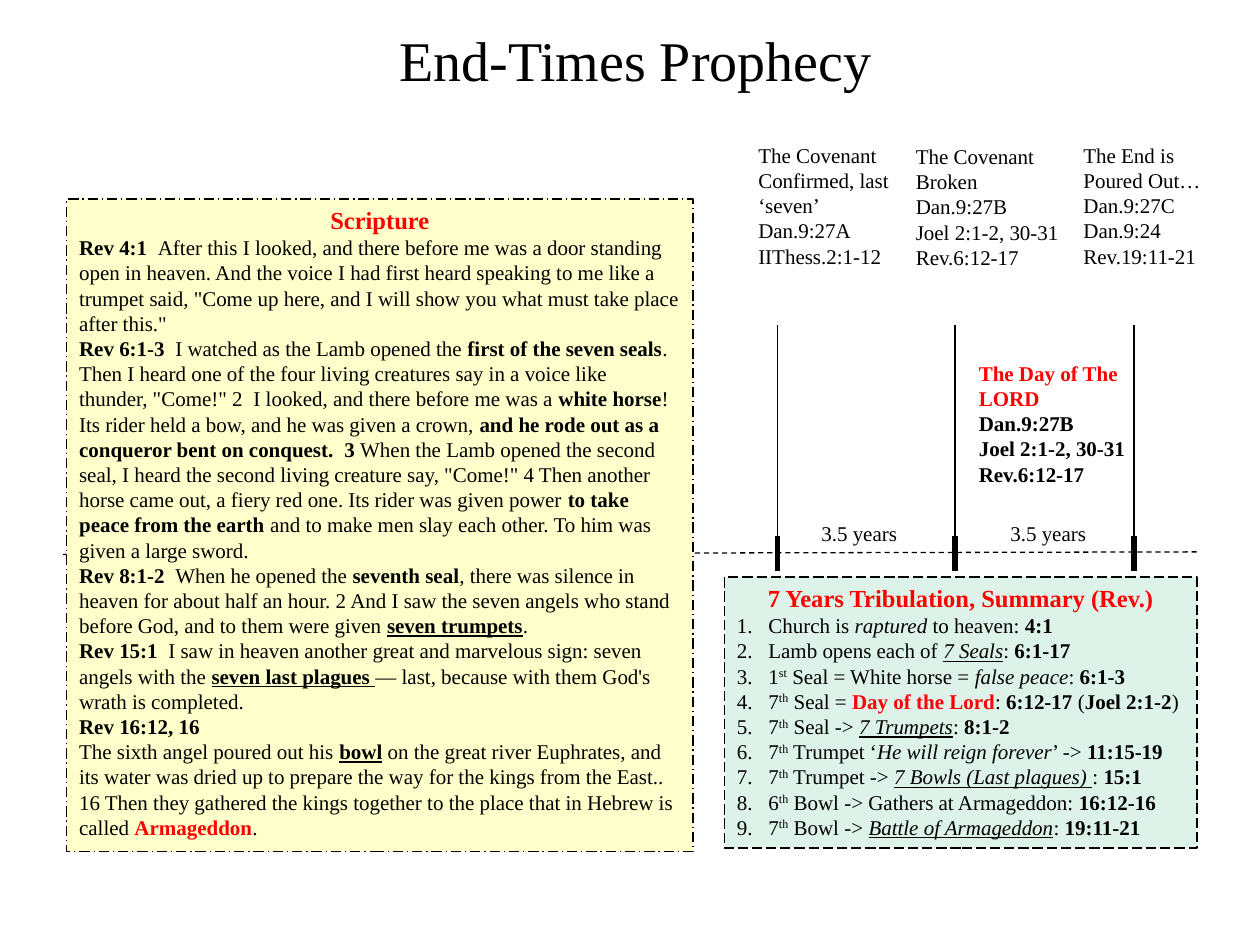
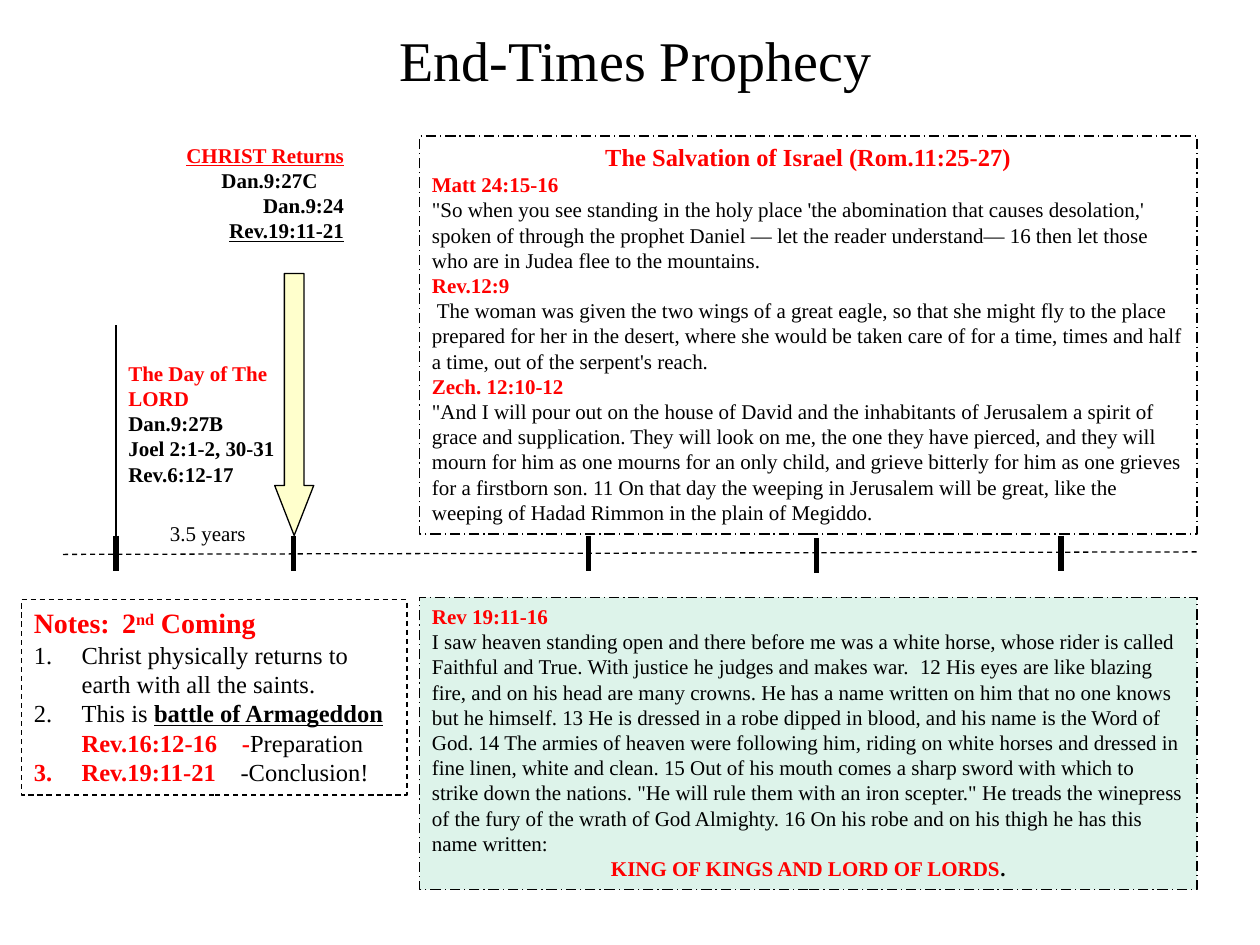
from lxml import etree
from pptx import Presentation
from pptx.dml.color import RGBColor
from pptx.enum import dml, shapes, text
from pptx.oxml.ns import qn
from pptx.util import Inches, Pt

HUES = {
    "ink": "000000",
    "red": "FF0000",
    "cream": "FFFFCC",
    "mint": "DDF3EA",
}
FONT = "Times New Roman"
DASH = dml.MSO_LINE
SIDES = {"^": text.PP_ALIGN.CENTER, ">": text.PP_ALIGN.RIGHT}
GAPS = {"g": "300", "w": "1050"}
AXIS = 4.25
SPAN = "3.5 years"
DAY = ["{br|The Day of The LORD}", "{b|Dan.9:27B}", "{b|Joel 2:1-2, 30-31}", "{b|Rev.6:12-17}"]

SCRIPT = [
    "^{br|Scripture}",
    "{b|Rev 4:1}{g| }After this I looked, and there before me was a door standing open in heaven. "
    "And the voice I had first heard speaking to me like a trumpet said, \"Come up here, "
    "and I will show you what must take place after this.\"",
    "{b|Rev 6:1-3}{g| }I watched as the Lamb opened the {b|first of the seven seals}. "
    "Then I heard one of the four living creatures say in a voice like thunder, \"Come!\" 2{g| }"
    "I looked, and there before me was a {b|white horse}! Its rider held a bow, and he was given "
    "a crown, {b|and he rode out as a conqueror bent on conquest.}{g| }{b|3 }When the Lamb opened "
    "the second seal, I heard the second living creature say, \"Come!\" 4 Then another horse came "
    "out, a fiery red one. Its rider was given power {b|to take peace from the earth }and to make "
    "men slay each other. To him was given a large sword.",
    "{b|Rev 8:1-2}{g| }When he opened the {b|seventh seal}, there was silence in heaven for about "
    "half an hour. 2 And I saw the seven angels who stand before God, and to them were given "
    "{bu|seven trumpets}.",
    "{b|Rev 15:1}{g| }I saw in heaven another great and marvelous sign: seven angels with the "
    "{bu|seven last plagues }— last, because with them God's wrath is completed.",
    "{b|Rev 16:12, 16}",
    "The sixth angel poured out his {bu|bowl} on the great river Euphrates, and its water was "
    "dried up to prepare the way for the kings from the East..",
    "16 Then they gathered the kings together to the place that in Hebrew is called "
    "{br|Armageddon}.",
]
SEVEN = [
    "^{br|7 Years Tribulation, Summary (Rev.)}",
    "#Church is {i|raptured} to heaven: {b|4:1}",
    "#Lamb opens each of {iu|7 Seals}: {b|6:1-17}",
    "#1{s|st} Seal = White horse = {i|false peace}: {b|6:1-3}",
    "#7{s|th} Seal = {br|Day of the Lord}: {b|6:12-17} ({b|Joel 2:1-2})",
    "#7{s|th} Seal -> {iu|7 Trumpets}: {b|8:1-2}",
    "#7{s|th} Trumpet ‘{i|He will reign forever}’ -> {b|11:15-19}",
    "#7{s|th} Trumpet -> {iu|7 Bowls (Last plagues) }: {b|15:1}",
    "#6{s|th} Bowl -> Gathers at Armageddon: {b|16:12-16}",
    "#7{s|th} Bowl -> {iu|Battle of Armageddon}: {b|19:11-21}",
]
NOTES = [
    "{br|Notes:}{brg| }{br|2}{brs|nd}{br| Coming}",
    "#Christ physically returns to earth with all the saints.",
    "#This is {bu|battle of Armageddon }{br|Rev.16:12-16}{brw| }{br|-}Preparation",
    "#{br|Rev.19:11-21}{w| }-Conclusion!",
]
RIDER = [
    "{br|Rev 19:11-16}",
    "I saw heaven standing open and there before me was a white horse, whose rider is called "
    "Faithful and True. With justice he judges and makes war.{g| }12 His eyes are like blazing "
    "fire, and on his head are many crowns. He has a name written on him that no one knows but he "
    "himself. 13 He is dressed in a robe dipped in blood, and his name is the Word of God. 14 The "
    "armies of heaven were following him, riding on white horses and dressed in fine linen, white "
    "and clean. 15 Out of his mouth comes a sharp sword with which to strike down the nations. "
    "\"He will rule them with an iron scepter.\" He treads the winepress of the fury of the wrath "
    "of God Almighty. 16 On his robe and on his thigh he has this name written:",
    "^{br|KING OF KINGS AND LORD OF LORDS}{b|.}",
]
SAVED = [
    "^{br|The Salvation of Israel (Rom.11:25-27)}",
    "{br|Matt 24:15-16}",
    "\"So when you see standing in the holy place 'the abomination that causes desolation,' spoken "
    "of through the prophet Daniel — let the reader understand— 16 then let those who are in Judea "
    "flee to the mountains.",
    "{br|Rev.12:9}",
    " The woman was given the two wings of a great eagle, so that she might fly to the place "
    "prepared for her in the desert, where she would be taken care of for a time, times and half "
    "a time, out of the serpent's reach.",
    "{br|Zech. 12:10-12}",
    "\"And I will pour out on the house of David and the inhabitants of Jerusalem a spirit of "
    "grace and supplication. They will look on me, the one they have pierced, and they will mourn "
    "for him as one mourns for an only child, and grieve bitterly for him as one grieves for a "
    "firstborn son. 11 On that day the weeping in Jerusalem will be great, like the weeping of "
    "Hadad Rimmon in the plain of Megiddo.",
]


def hue(name):
    return RGBColor.from_string(HUES[name])


def add_run(para, words, size, style=""):
    run = para.add_run()
    run.text = words
    font = run.font
    font.name, font.size = FONT, Pt(size)
    font.bold, font.italic, font.underline = "b" in style, "i" in style, "u" in style
    font.color.rgb = hue("red" if "r" in style else "ink")
    props = run._r.get_or_add_rPr()
    if "s" in style:
        props.set("baseline", "30000")
    for key in GAPS:
        if key in style:
            props.set("spc", GAPS[key])


def indent(para, left, first=0):
    props = para._p.get_or_add_pPr()
    props.set("marL", str(Inches(left)))
    props.set("indent", str(Inches(first)))
    return props


def add_para(para, line, size, hang):
    para.alignment = SIDES.get(line[0], text.PP_ALIGN.LEFT)
    if line[0] == "#":
        props = indent(para, hang, -hang)
        etree.SubElement(props, qn("a:buAutoNum"), type="arabicPeriod")
    elif line[0] == "+":
        indent(para, 0.33)
    for chunk in line.lstrip("^>#+").split("{"):
        marked, brace, plain = chunk.rpartition("}")
        if brace:
            style, _, words = marked.partition("|")
            add_run(para, words, size, style)
        if plain:
            add_run(para, plain, size)


def fill_text(shape, lines, size=12, head=None, hang=0.25):
    frame = shape.text_frame
    frame.word_wrap = True
    frame.auto_size = text.MSO_AUTO_SIZE.NONE
    frame.vertical_anchor = text.MSO_ANCHOR.TOP
    for k, line in enumerate(lines):
        para = frame.add_paragraph() if k else frame.paragraphs[0]
        add_para(para, line, size if k else head or size, hang)


def add_label(slide, at, lines):
    fill_text(slide.shapes.add_textbox(*map(Inches, at)), lines)


def add_block(slide, kind, at, fill=None, dash=None):
    shape = slide.shapes.add_shape(kind, *map(Inches, at))
    shape.shadow.inherit = False
    if fill:
        shape.fill.solid()
        shape.fill.fore_color.rgb = hue(fill)
    else:
        shape.fill.background()
    shape.line.color.rgb = hue("ink")
    shape.line.width = Pt(0.75)
    if dash:
        shape.line.dash_style = dash
    return shape


def add_panel(slide, at, lines, fill=None, dash=DASH.LONG_DASH_DOT, **sizes):
    shape = add_block(slide, shapes.MSO_SHAPE.RECTANGLE, at, fill, dash)
    fill_text(shape, lines, **sizes)


def add_line(slide, start, end, width=0.75, dash=None):
    line = slide.shapes.add_connector(shapes.MSO_CONNECTOR.STRAIGHT, *map(Inches, start + end))
    line.line.color.rgb = hue("ink")
    line.line.width = Pt(width)
    if dash:
        line.line.dash_style = dash
    etree.SubElement(line._element.spPr, qn("a:effectLst"))


def add_tick(slide, x, top=AXIS):
    add_line(slide, (x, top), (x, top + 0.28), 3)


def add_post(slide, x):
    add_line(slide, (x, AXIS), (x, 2.58))


def add_page(deck):
    slide = deck.slides.add_slide(deck.slide_layouts[5])
    title = slide.shapes.title
    title.left, title.top, title.width, title.height = map(Inches, (2.17, 0.15, 5.75, 0.63))
    fill_text(title, ["^End-Times Prophecy"], 32)
    add_line(slide, (0.5, 4.4), (9.5, 4.38), dash=DASH.DASH)
    return slide


def build_seals(deck):
    slide = add_page(deck)
    for x in (6.17, 7.58, 9):
        add_post(slide, x)
        add_tick(slide, x)
    add_label(slide, (5.92, 1.08, 1.33, 1.11),
              ["The Covenant Confirmed, last ‘seven’", "Dan.9:27A", "IIThess.2:1-12"])
    add_label(slide, (7.17, 1.09, 1.42, 1.11),
              ["The Covenant Broken", "Dan.9:27B", "Joel 2:1-2, 30-31", "Rev.6:12-17"])
    add_label(slide, (8.5, 1.08, 1.42, 1.11),
              ["The End is Poured Out…", "Dan.9:27C", "Dan.9:24", "Rev.19:11-21"])
    add_label(slide, (7.67, 2.81, 1.42, 1.11), DAY)
    for x in (6.42, 7.92):
        add_label(slide, (x, 4.08, 0.92, 0.3), [SPAN])
    add_panel(slide, (5.75, 4.58, 3.75, 2.15), SEVEN, "mint", DASH.LONG_DASH, head=14)
    add_panel(slide, (0.53, 1.58, 4.97, 5.18), SCRIPT, "cream", head=14)


def build_return(deck):
    slide = add_page(deck)
    add_post(slide, 0.92)
    for x in (0.92, 2.33, 4.67, 8.42):
        add_tick(slide, x)
    add_tick(slide, 6.48, 4.27)
    add_label(slide, (0.92, 2.81, 1.42, 1.11), DAY)
    add_label(slide, (1.25, 4.08, 0.92, 0.3), [SPAN])
    arrow = add_block(slide, shapes.MSO_SHAPE.DOWN_ARROW, (2.18, 2.17, 0.31, 2.08), "cream")
    arrow.adjustments[0], arrow.adjustments[1] = 0.5, 1.28
    add_label(slide, (1.33, 1.08, 1.5, 0.91),
              [">{bru|CHRIST Returns}", "+{b|Dan.9:27C}", ">{b|Dan.9:24}", ">{bu|Rev.19:11-21}"])
    add_panel(slide, (0.17, 4.76, 3.06, 1.55), NOTES, dash=DASH.DASH, size=14, head=16, hang=0.38)
    add_panel(slide, (3.33, 4.74, 6.17, 2.32), RIDER, "mint")
    add_panel(slide, (3.33, 1.08, 6.17, 3.16), SAVED, head=14)


def main():
    deck = Presentation()
    deck.slide_width, deck.slide_height = Inches(10), Inches(7.5)
    build_seals(deck)
    build_return(deck)
    deck.save("out.pptx")


if __name__ == "__main__":
    main()
